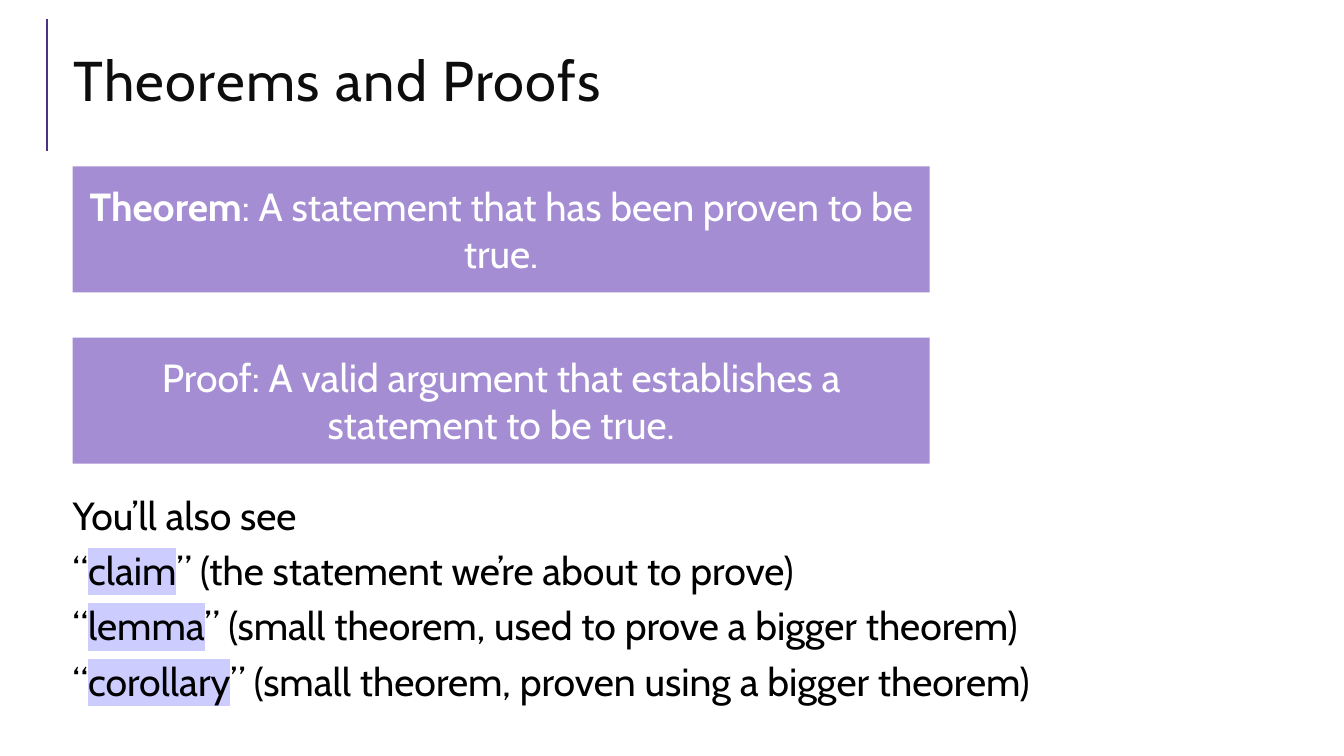
import pptx
import pptx.util
import pptx.dml.color
import pptx.enum.shapes
import pptx.enum.text
import pptx.oxml
import pptx.oxml.ns
from pptx.util import Inches

RGBColor = pptx.dml.color.RGBColor
Align = pptx.enum.text.PP_ALIGN
Anchor = pptx.enum.text.MSO_ANCHOR
Pt = pptx.util.Pt

BLACK = RGBColor(0x00, 0x00, 0x00)
INK = RGBColor(0x0D, 0x0D, 0x0D)
WHITE = RGBColor(0xFF, 0xFF, 0xFF)
RULE = RGBColor(0x4C, 0x32, 0x82)
LILAC = RGBColor(0xA4, 0x8D, 0xD3)
MARK = RGBColor(0xCC, 0xCC, 0xFF)


def assign(item, values):
    for name, value in values.items():
        setattr(item, name, value)


def make(tag, parent):
    node = pptx.oxml.parse_xml(f"<a:{tag} {pptx.oxml.ns.nsdecls('a')}/>")
    parent.append(node)
    return node


class Deck:
    font = "Cabin"
    size = Pt(28)

    def __init__(self):
        self.show = pptx.Presentation()
        assign(self.show, {"slide_width": Inches(13.33),
                           "slide_height": Inches(7.5)})
        self.slide = self.show.slides.add_slide(self.show.slide_layouts[6])

    def rule(self, x, top, end):
        line = self.slide.shapes.add_connector(
            pptx.enum.shapes.MSO_CONNECTOR.STRAIGHT,
            Inches(x), Inches(end), Inches(x), Inches(top))
        line.line.color.rgb = RULE
        line.line.width = Pt(1.5)
        make("effectLst", line._element.spPr)

    def run(self, para, text, color, size=None, bold=False):
        run = para.add_run()
        run.text = text
        assign(run.font, {"size": size or self.size, "name": self.font,
                          "bold": bold})
        run.font.color.rgb = color
        return run._r.get_or_add_rPr()

    def mark(self, props, color):
        """Put a highlight behind a run, ahead of its font name."""
        light = make("highlight", props)
        make("srgbClr", light).set("val", str(color))
        props.find(pptx.oxml.ns.qn("a:latin")).addprevious(light)

    def text(self, area, **frame):
        box = self.slide.shapes.add_textbox(*map(Inches, area))
        assign(box.text_frame, {"word_wrap": True, **frame})
        return box.text_frame

    def title(self, area, text):
        para = self.text(area, vertical_anchor=Anchor.MIDDLE).paragraphs[0]
        para.line_spacing = 0.8
        self.run(para, text, INK, Pt(40)).set("spc", "100")

    def panel(self, area, term, rest, bold):
        box = self.slide.shapes.add_shape(
            pptx.enum.shapes.MSO_SHAPE.RECTANGLE, *map(Inches, area))
        box.shadow.inherit = False
        box.fill.solid()
        box.fill.fore_color.rgb = LILAC
        box.line.fill.background()
        assign(box.text_frame, {"word_wrap": True,
                                "vertical_anchor": Anchor.MIDDLE})
        para = box.text_frame.paragraphs[0]
        para.alignment = Align.CENTER
        self.run(para, term, WHITE, bold=bold)
        self.run(para, rest, WHITE)

    def terms(self, area, intro, pairs):
        """List quoted, highlighted terms below an opening line."""
        frame = self.text(area, margin_left=Inches(0.09),
                          margin_right=Inches(0.05))
        self.run(frame.paragraphs[0], intro, BLACK)
        for term, note in pairs:
            para = frame.add_paragraph()
            self.run(para, "“", BLACK)
            self.mark(self.run(para, term, BLACK), MARK)
            self.run(para, f"” ({note})", BLACK)
        for para in frame.paragraphs:
            assign(para, {"space_before": Pt(2), "space_after": Pt(4)})


def main():
    deck = Deck()
    deck.rule(0.47, 0.19, 1.5)
    deck.title((0.63, 0.29, 12.23, 1.11), "Theorems and Proofs")
    deck.terms((0.63, 4.82, 12.23, 2.28), "You’ll also see", [
        ("claim", "the statement we’re about to prove"),
        ("lemma", "small theorem, used to prove a bigger theorem"),
        ("corollary", "small theorem, proven using a bigger theorem"),
    ])
    panels = [
        ("Theorem", ": A statement that has been proven to be true.", True),
        ("Proof", ": A valid argument that establishes a statement"
                  " to be true.", False),
    ]
    for row, panel in enumerate(panels):
        deck.panel((0.72, 1.65 + 1.7 * row, 8.5, 1.25), *panel)
    deck.show.save("out.pptx")


if __name__ == "__main__":
    main()
